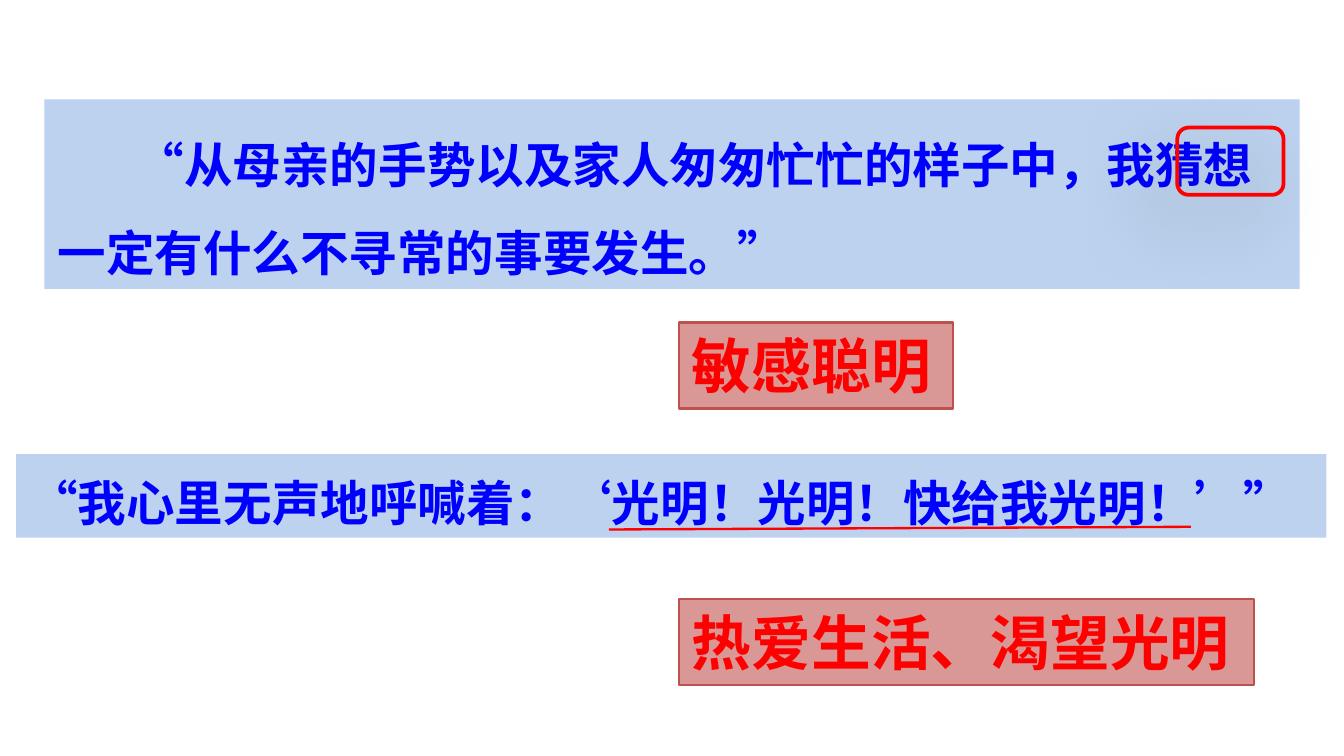
from dataclasses import dataclass

from lxml.etree import SubElement
from pptx import Presentation
from pptx.dml.color import RGBColor
from pptx.enum.lang import MSO_LANGUAGE_ID
from pptx.enum.shapes import MSO_CONNECTOR, MSO_SHAPE
from pptx.enum.text import MSO_ANCHOR, MSO_AUTO_SIZE, PP_ALIGN
from pptx.oxml import parse_xml
from pptx.oxml.ns import nsdecls, qn
from pptx.util import Inches, Pt


@dataclass(frozen=True)
class Theme:
    font: str = "Noto Sans CJK SC"
    quote_fill: str = "8EB4E3"
    quote_text: str = "0000FF"
    trait_fill: str = "C0504D"
    accent: str = "FF0000"
    quote_size: int = 26
    trait_size: int = 32
    fill_opacity: int = 59


class SlideBuilder:
    def __init__(self, slide, theme):
        self.slide = slide
        self.theme = theme

    def add_shape(self, kind, left, top, width, height):
        shape = self.slide.shapes.add_shape(
            kind, Inches(left), Inches(top), Inches(width), Inches(height))
        shape.shadow.inherit = False
        shape.fill.background()
        shape.line.fill.background()
        return shape

    def set_line(self, shape, color, width):
        shape.line.color.rgb = RGBColor.from_string(color)
        shape.line.width = Pt(width)

    def text_panel(self, box, text, fill, color, size, spacing=1.0, indent=0):
        shape = self.add_shape(MSO_SHAPE.RECTANGLE, *box)
        shape.fill.solid()
        shape.fill.fore_color.rgb = RGBColor.from_string(fill)
        fill_color = shape.fill._xPr.find(qn("a:solidFill"))[0]
        SubElement(fill_color, qn("a:alpha"), val=str(self.theme.fill_opacity * 1000))

        text_frame = shape.text_frame
        text_frame.text = text
        text_frame.word_wrap = True
        text_frame.auto_size = MSO_AUTO_SIZE.SHAPE_TO_FIT_TEXT
        text_frame.vertical_anchor = MSO_ANCHOR.TOP
        paragraph = text_frame.paragraphs[0]
        paragraph.alignment = PP_ALIGN.LEFT
        paragraph.line_spacing = spacing
        paragraph._p.get_or_add_pPr().set("indent", str(Inches(indent)))
        font = paragraph.runs[0].font
        font.name = self.theme.font
        font.size = Pt(size)
        font.bold = True
        font.color.rgb = RGBColor.from_string(color)
        font.language_id = MSO_LANGUAGE_ID.SIMPLIFIED_CHINESE
        SubElement(font._element, qn("a:ea"), typeface=self.theme.font)
        return shape

    def quote(self, box, text, spacing, indent=0):
        theme = self.theme
        return self.text_panel(box, text, theme.quote_fill, theme.quote_text,
                               theme.quote_size, spacing, indent)

    def trait(self, box, text):
        theme = self.theme
        shape = self.text_panel(box, text, theme.trait_fill, theme.accent, theme.trait_size)
        self.set_line(shape, theme.trait_fill, 1.25)
        return shape

    def word_frame(self, box):
        shape = self.add_shape(MSO_SHAPE.ROUNDED_RECTANGLE, *box)
        self.set_line(shape, self.theme.accent, 2)
        # Soft shadow falling to the lower left
        effects = shape._element.spPr.find(qn("a:effectLst"))
        effects.append(parse_xml(
            f'<a:outerShdw {nsdecls("a")} blurRad="{Pt(35)}" dist="{Pt(20)}" '
            f'dir="{135 * 60000}" rotWithShape="0"><a:srgbClr val="000000">'
            '<a:alpha val="50000"/></a:srgbClr></a:outerShdw>'))
        return shape

    def underline(self, start, end):
        connector = self.slide.shapes.add_connector(
            MSO_CONNECTOR.STRAIGHT, *(Inches(value) for value in start + end))
        self.set_line(connector, self.theme.accent, 1.25)
        SubElement(connector._element.spPr, qn("a:effectLst"))
        return connector


def main():
    presentation = Presentation()
    # Widescreen, 16:9
    presentation.slide_width = Inches(10)
    presentation.slide_height = presentation.slide_width * 9 // 16
    slide = presentation.slides.add_slide(presentation.slide_layouts[6])
    builder = SlideBuilder(slide, Theme())

    # Quotations
    builder.quote((0.33, 0.74, 9.34, 1.41),
                  " “从母亲的手势以及家人匆匆忙忙的样子中，我猜想一定有什么不寻常的事要发生。”",
                  spacing=1.5, indent=0.5)
    builder.quote((0.12, 3.38, 9.75, 0.62),
                  "“我心里无声地呼喊着：‘光明！光明！快给我光明！’”", spacing=1.2)

    # Marks on the key words
    builder.word_frame((8.76, 0.95, 0.79, 0.5))
    builder.underline((4.53, 3.94), (8.86, 3.92))

    # Character traits
    builder.trait((5.05, 2.4, 2.04, 0.64), "敏感聪明")
    builder.trait((5.05, 4.46, 4.28, 0.64), "热爱生活、渴望光明")

    presentation.save("out.pptx")


if __name__ == "__main__":
    main()
